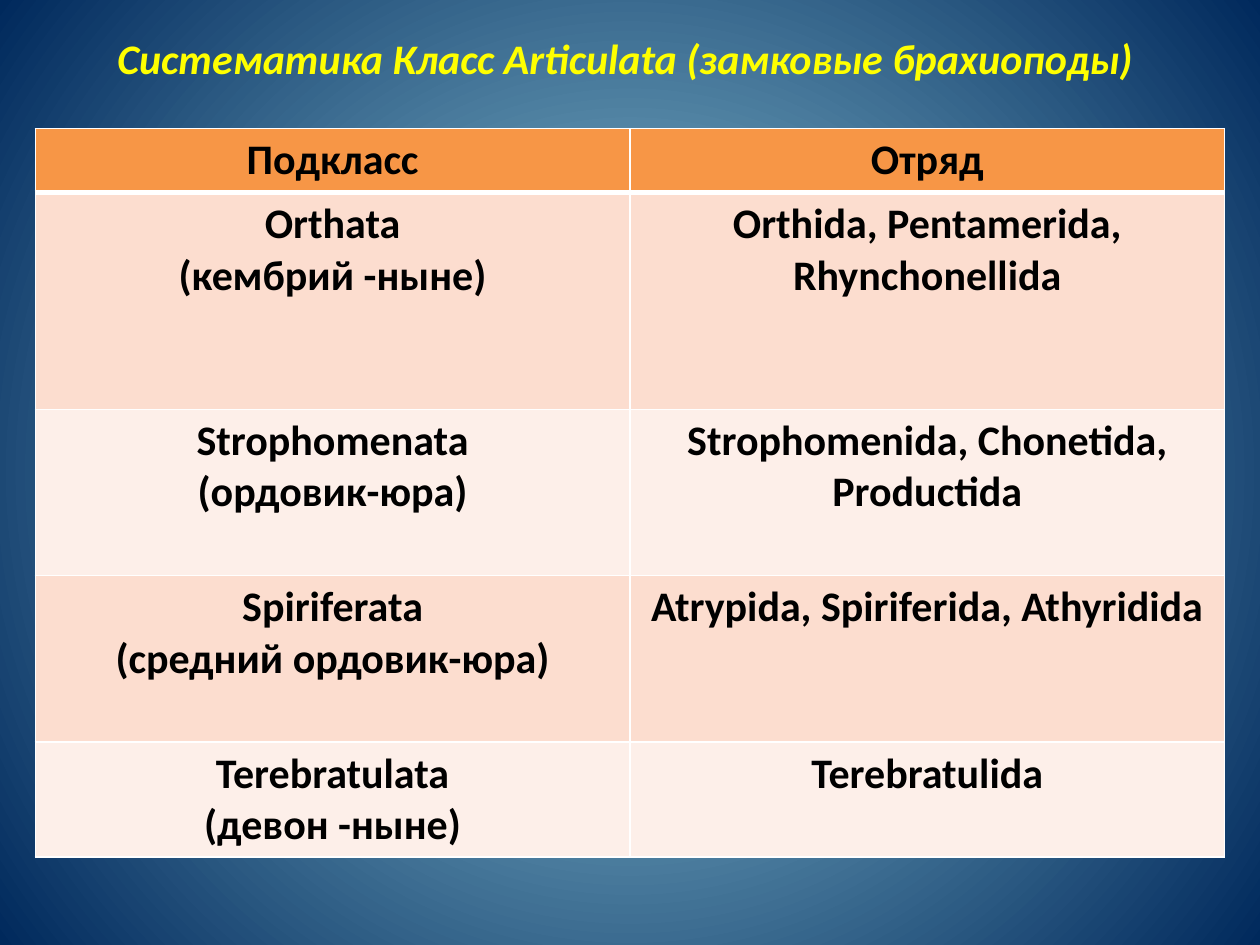
from lxml import etree
from pptx import Presentation, util as u
from pptx.dml.color import RGBColor
from pptx.enum import text
from pptx.oxml import ns

COLORS = {
    "glow": "93CDDD", "navy": "00295C", "title": "FFFF00", "ink": "000000",
    "header": "F79646", "odd": "FCDDCF", "even": "FDEFE9", "border": "FFFFFF",
}
ROWS = [
    (0.51, "Подкласс", "Отряд"),
    (1.72, "Orthata\n(кембрий -ныне)", "Orthida, Pentamerida, Rhynchonellida"),
    (1.32, "Strophomenata\n(ордовик-юра)", "Strophomenida, Chonetida, Productida"),
    (1.32, "Spiriferata\n(средний ордовик-юра)", "Atrypida, Spiriferida, Athyridida"),
    (0.91, "Terebratulata\n(девон -ныне)", "Terebratulida"),
]


class SlideBuilder:
    """Holds the slide style and adds each kind of element."""

    font, size = "Calibri", 24

    def __init__(self, presentation):
        self.slide = presentation.slides.add_slide(presentation.slide_layouts[6])

    def color(self, name):
        return RGBColor.from_string(COLORS[name])

    def background(self, center, edge):
        fill = self.slide.background.fill
        fill.gradient()
        for stop, name in zip(fill.gradient_stops, (center, edge)):
            stop.color.rgb = self.color(name)
        linear = self.slide.element.find(".//" + ns.qn("a:lin"))
        radial = etree.Element(ns.qn("a:path"), {"path": "circle"})
        etree.SubElement(radial, ns.qn("a:fillToRect"),
                         {side: "50000" for side in "ltrb"})
        linear.getparent().replace(linear, radial)

    def set_text(self, frame, content, color, italic=False):
        frame.text = content
        frame.word_wrap = True
        for paragraph in frame.paragraphs:
            paragraph.alignment = text.PP_ALIGN.CENTER
            for run in paragraph.runs:
                run.font.name, run.font.size = self.font, u.Pt(self.size)
                run.font.bold, run.font.italic = True, italic
                run.font.color.rgb = self.color(color)

    def title(self, content, left, top, width, height):
        box = self.slide.shapes.add_textbox(*map(u.Inches, (left, top, width, height)))
        self.set_text(box.text_frame, content, "title", italic=True)

    def borders(self, cell, widths):
        properties = cell._tc.get_or_add_tcPr()
        for position, (side, width) in enumerate(widths.items()):
            line = etree.Element(ns.qn("a:ln" + side), w=str(u.Pt(width)))
            fill = etree.SubElement(line, ns.qn("a:solidFill"))
            etree.SubElement(fill, ns.qn("a:srgbClr"), val=COLORS["border"])
            properties.insert(position, line)

    def table(self, rows, left, top, width):
        height = sum(row[0] for row in rows)
        frame = self.slide.shapes.add_table(
            len(rows), len(rows[0]) - 1, *map(u.Inches, (left, top, width, height)))
        for index, (row_height, *contents) in enumerate(rows):
            frame.table.rows[index].height = u.Inches(row_height)
            fill = "header" if index == 0 else ("even", "odd")[index % 2]
            widths = {"L": 1, "R": 1, "T": 3 if index == 1 else 1,
                      "B": 3 if index == 0 else 1}
            for cell, content in zip(frame.table.rows[index].cells, contents):
                cell.fill.solid()
                cell.fill.fore_color.rgb = self.color(fill)
                self.borders(cell, widths)
                self.set_text(cell.text_frame, content, "ink")


def main():
    presentation = Presentation()
    presentation.slide_width, presentation.slide_height = u.Inches(10), u.Inches(7.5)
    margin = 0.28
    width = 10 - 2 * margin
    builder = SlideBuilder(presentation)
    builder.background("glow", "navy")
    builder.table(ROWS, margin, 1.02, width)
    builder.title("Систематика Класс Artiсulata (замковые брахиоподы) ",
                  margin, 0.21, width, 0.81)
    presentation.save("out.pptx")


if __name__ == "__main__":
    main()
